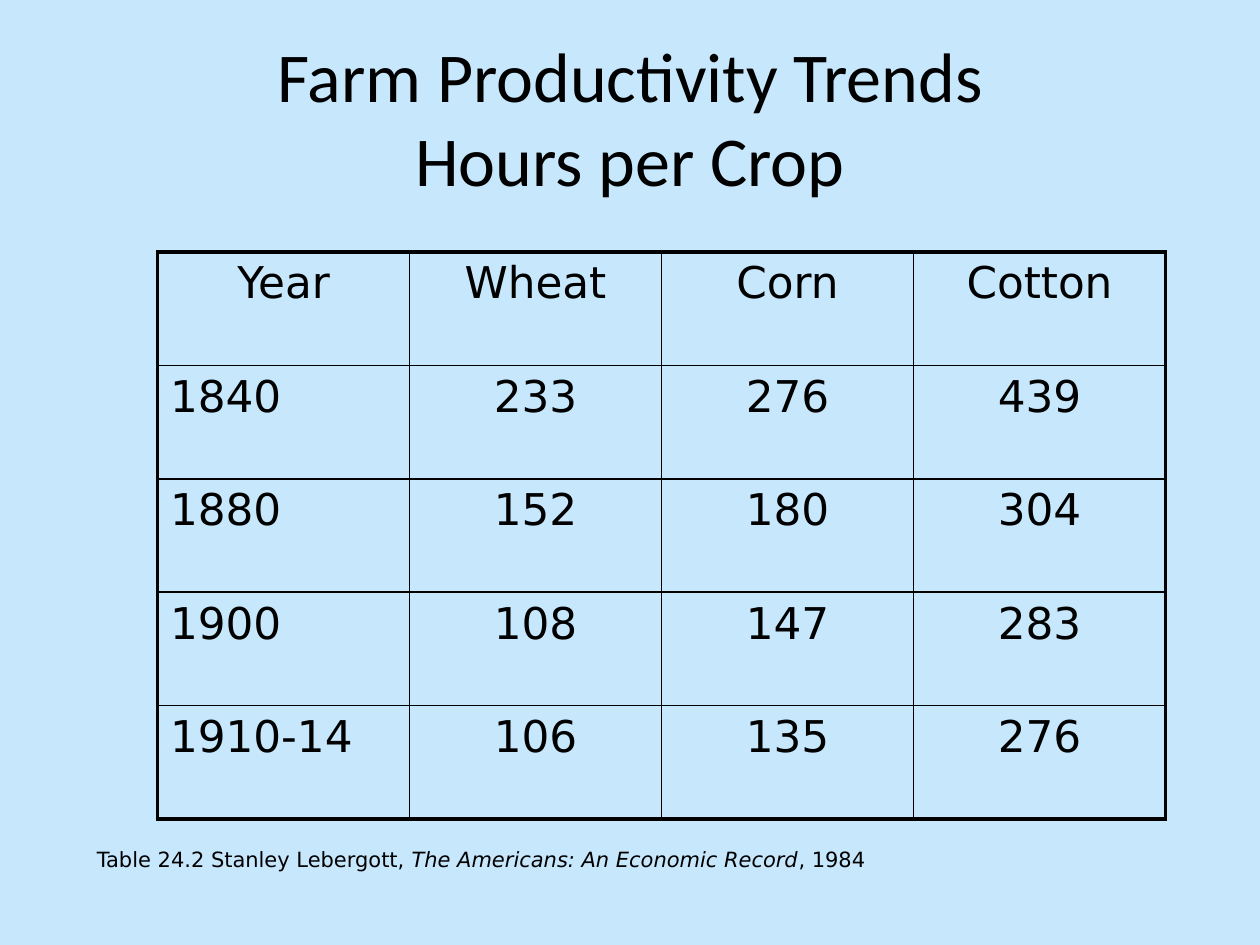
from lxml.etree import SubElement
from pptx import Presentation
from pptx.dml.color import RGBColor
from pptx.enum.text import MSO_ANCHOR, PP_ALIGN
from pptx.oxml.ns import qn
from pptx.util import Inches, Pt

COLORS = {"background": "C6E7FC", "ink": "000000"}
CROP_HOURS = [
    ["Year", "Wheat", "Corn", "Cotton"],
    ["1840", "233", "276", "439"],
    ["1880", "152", "180", "304"],
    ["1900", "108", "147", "283"],
    ["1910-14", "106", "135", "276"],
]
OUTER, INNER = Pt(2.25), Pt(1)


def add_text(para, text, font_name, size, italic=False):
    span = para.add_run()
    span.text = text
    span.font.name = font_name
    span.font.size = Pt(size)
    span.font.italic = italic
    span.font.color.rgb = RGBColor.from_string(COLORS["ink"])


def add_border(cell, side, width):
    """Draw one cell border; side is L, R, T or B, added in that order."""
    line = SubElement(cell._tc.get_or_add_tcPr(), qn(f"a:ln{side}"), w=str(width))
    fill = SubElement(line, qn("a:solidFill"))
    SubElement(fill, qn("a:srgbClr"), val=COLORS["ink"])


deck = Presentation()
deck.slide_width, deck.slide_height = Inches(10), Inches(7.5)
page = deck.slides.add_slide(deck.slide_layouts[5])
page.background.fill.solid()
page.background.fill.fore_color.rgb = RGBColor.from_string(COLORS["background"])

# Title
title = page.shapes.title
title.left, title.top = Inches(0.5), Inches(0.3)
title.width, title.height = Inches(9), Inches(1.25)
title.text_frame.vertical_anchor = MSO_ANCHOR.MIDDLE
para = title.text_frame.paragraphs[0]
para.alignment = PP_ALIGN.CENTER
add_text(para, "Farm Productivity Trends", "Calibri", 40)
para.add_line_break()
add_text(para, "Hours per Crop", "Calibri", 40)

# Table of hours per crop
last_row, last_column = len(CROP_HOURS) - 1, len(CROP_HOURS[0]) - 1
table = page.shapes.add_table(
    last_row + 1, last_column + 1, Inches(1.25), Inches(2), Inches(8), Inches(4.5)
).table
table.first_row = table.horz_banding = False
for row, values in enumerate(CROP_HOURS):
    for column, value in enumerate(values):
        cell = table.cell(row, column)
        para = cell.text_frame.paragraphs[0]
        is_year = column == 0 and row > 0
        para.alignment = PP_ALIGN.LEFT if is_year else PP_ALIGN.CENTER
        add_text(para, value, "DejaVu Sans", 25)
        add_border(cell, "L", OUTER if column == 0 else INNER)
        add_border(cell, "R", OUTER if column == last_column else INNER)
        add_border(cell, "T", OUTER if row == 0 else INNER)
        add_border(cell, "B", OUTER if row == last_row else INNER)
        cell.fill.background()

# Source note
note = page.shapes.add_textbox(Inches(0.67), Inches(6.67), Inches(7.61), Inches(0.55))
note.text_frame.word_wrap = True
para = note.text_frame.paragraphs[0]
add_text(para, "Table 24.2 Stanley Lebergott, ", "DejaVu Sans", 12)
add_text(para, "The Americans: An Economic Record", "DejaVu Sans", 12, italic=True)
add_text(para, ", 1984", "DejaVu Sans", 12)

deck.save("out.pptx")
